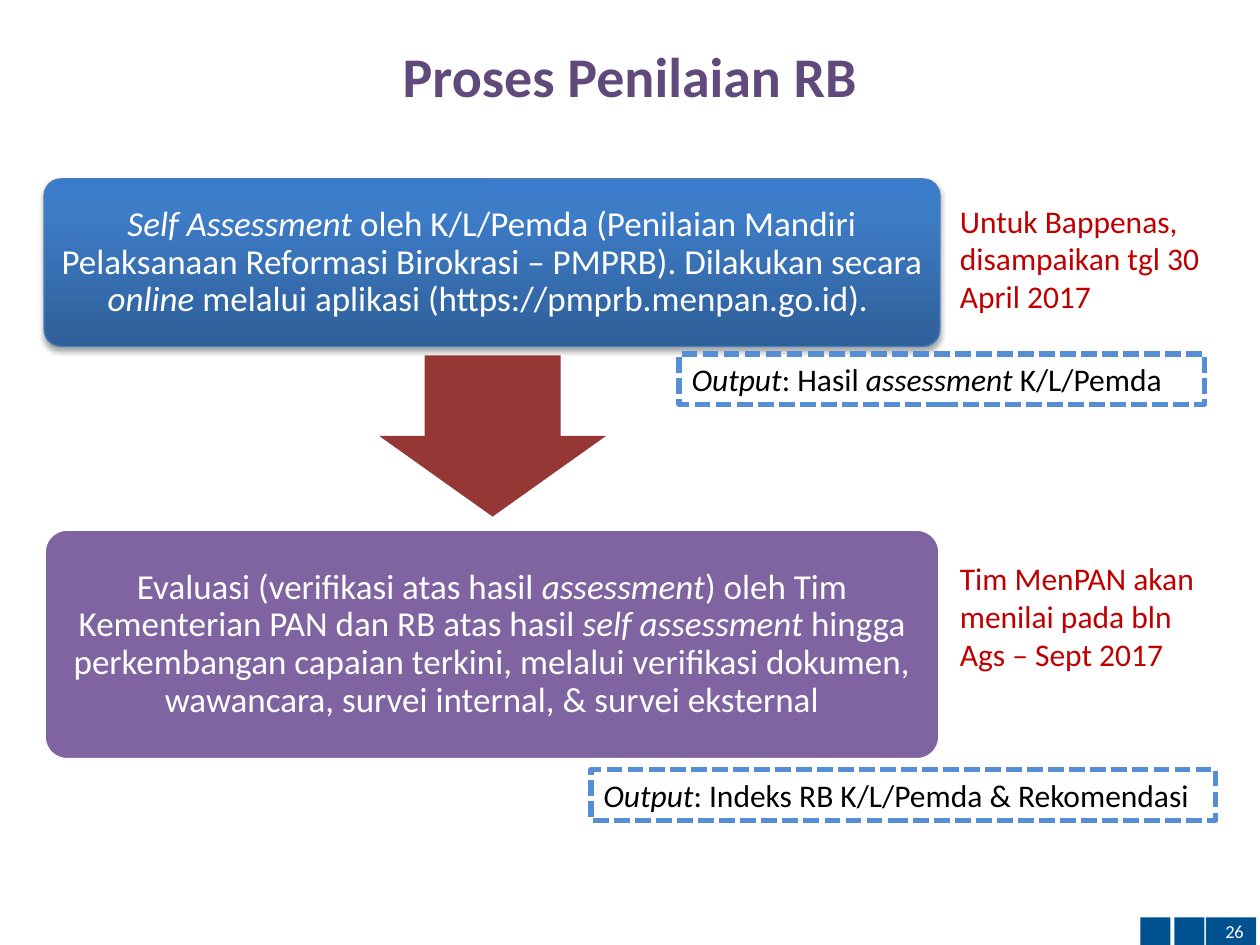
from copy import deepcopy

from lxml import etree
from pptx import Presentation
from pptx.dml.color import RGBColor
from pptx.enum.dml import MSO_LINE
from pptx.enum.shapes import MSO_SHAPE
from pptx.enum.text import MSO_ANCHOR, MSO_AUTO_SIZE, PP_ALIGN
from pptx.oxml.ns import qn
from pptx.util import Inches, Pt

RECT = MSO_SHAPE.RECTANGLE
ROUND_RECT = MSO_SHAPE.ROUNDED_RECTANGLE
DOWN_ARROW = MSO_SHAPE.DOWN_ARROW
DASH = MSO_LINE.SQUARE_DOT
LEFT, CENTER, RIGHT = PP_ALIGN.LEFT, PP_ALIGN.CENTER, PP_ALIGN.RIGHT
TOP, MIDDLE = MSO_ANCHOR.TOP, MSO_ANCHOR.MIDDLE
FIT_SHAPE = MSO_AUTO_SIZE.SHAPE_TO_FIT_TEXT

FONT = "Calibri"
BLACK = RGBColor(0x00, 0x00, 0x00)
WHITE = RGBColor(0xFF, 0xFF, 0xFF)
NAVY = RGBColor(0x00, 0x51, 0x8F)
TITLE_PURPLE = RGBColor(0x60, 0x4A, 0x7B)
PURPLE = RGBColor(0x80, 0x64, 0xA2)
DARK_RED = RGBColor(0x95, 0x37, 0x35)
RED = RGBColor(0xC0, 0x00, 0x00)
DASH_BLUE = RGBColor(0x55, 0x8E, 0xD5)
EDGE_BLUE = RGBColor(0x4B, 0x7E, 0xBC)
GRADIENT = [
    (0, RGBColor(0x2F, 0x5F, 0x99)),
    (0.8, RGBColor(0x3D, 0x7C, 0xC7)),
    (1, RGBColor(0x3A, 0x7C, 0xCB)),
]


def write(tf, runs, size, color, align=LEFT, anchor=TOP, bold=False):
    tf.word_wrap = True
    tf.vertical_anchor = anchor
    p = tf.paragraphs[0]
    p.alignment = align
    for text, italic in runs:
        r = p.add_run()
        r.text = text
        r.font.name = FONT
        r.font.size = Pt(size)
        r.font.color.rgb = color
        r.font.bold = bold
        r.font.italic = italic
    return p


def add_box(slide, kind, box, fill=None, line=None, width=1):
    s = slide.shapes.add_shape(kind, *map(Inches, box))
    s.shadow.inherit = False
    if fill is None:
        s.fill.background()
    else:
        s.fill.solid()
        s.fill.fore_color.rgb = fill
    if line is None:
        s.line.fill.background()
    else:
        s.line.color.rgb = line
        s.line.width = Pt(width)
    return s


def add_step(slide, top, height, runs, fill, line, width):
    s = add_box(slide, ROUND_RECT, (0.35, top, 7.11, height), fill, line, width)
    s.adjustments[0] = 0.1
    tf = s.text_frame
    tf.margin_left = tf.margin_right = Inches(0.03)
    tf.margin_top = tf.margin_bottom = Inches(0.03)
    p = write(tf, runs, 20, WHITE, CENTER, MIDDLE)
    p.line_spacing = 0.9
    return s


def add_gradient(s):
    s.fill.gradient()
    s.fill.gradient_angle = 90
    stops = s._element.spPr.find(qn("a:gradFill")).find(qn("a:gsLst"))
    stops.insert(1, deepcopy(stops[0]))
    for stop, (position, color) in zip(s.fill.gradient_stops, GRADIENT):
        stop.position = position
        stop.color.rgb = color


def add_shadow(s):
    effects = s._element.spPr.find(qn("a:effectLst"))
    shadow = etree.SubElement(
        effects, qn("a:outerShdw"), blurRad=str(Pt(3.1)), dist=str(Pt(1.8)),
        dir="5400000", rotWithShape="0")
    color = etree.SubElement(shadow, qn("a:srgbClr"), val="000000")
    etree.SubElement(color, qn("a:alpha"), val="35000")


def add_output(slide, box, runs):
    s = add_box(slide, RECT, box, line=DASH_BLUE, width=3)
    s.line.dash_style = DASH
    write(s.text_frame, runs, 18, BLACK)
    s.text_frame.auto_size = FIT_SHAPE


def add_label(slide, box, text, size, color, **style):
    tf = slide.shapes.add_textbox(*map(Inches, box)).text_frame
    write(tf, [(text, False)], size, color, **style)
    return tf


def add_note(slide, top, text):
    tf = add_label(slide, (7.52, top, 2.13, 1.01), text, 18, RED)
    tf.auto_size = FIT_SHAPE


def add_page_number(slide, number):
    for left, width in ((9.05, 0.24), (9.32, 0.24), (9.57, 0.4)):
        s = add_box(slide, RECT, (left, 7.28, width, 0.22), NAVY)
    write(s.text_frame, [(number, False)], 10.5, WHITE, RIGHT, MIDDLE)


def main():
    prs = Presentation()
    prs.slide_width, prs.slide_height = Inches(10), Inches(7.5)
    slide = prs.slides.add_slide(prs.slide_layouts[6])

    add_page_number(slide, "26")
    add_label(slide, (0.5, 0.13, 9, 0.93), "Proses Penilaian RB", 32,
              TITLE_PURPLE, align=CENTER, anchor=MIDDLE, bold=True)

    s = add_step(slide, 1.42, 1.33, [
        ("Self Assessment ", True),
        ("oleh K/L/Pemda (Penilaian Mandiri Pelaksanaan Reformasi "
         "Birokrasi – PMPRB). Dilakukan secara ", False),
        ("online ", True),
        ("melalui aplikasi (https://pmprb.menpan.go.id). ", False),
    ], NAVY, EDGE_BLUE, 0.75)
    add_gradient(s)
    add_shadow(s)

    s = add_box(slide, DOWN_ARROW, (3.01, 2.82, 1.8, 1.28), DARK_RED)
    s.adjustments[0] = 0.6
    s.adjustments[1] = 0.5

    add_step(slide, 4.2, 1.83, [
        ("Evaluasi (verifikasi atas hasil ", False),
        ("assessment", True),
        (") oleh Tim Kementerian PAN dan RB atas hasil ", False),
        ("self assessment ", True),
        ("hingga perkembangan capaian terkini, melalui verifikasi dokumen, "
         "wawancara, survei internal, & survei eksternal", False),
    ], PURPLE, WHITE, 2)

    add_output(slide, (5.39, 2.81, 4.17, 0.4), [
        ("Output", True), (": Hasil ", False),
        ("assessment ", True), ("K/L/Pemda", False),
    ])
    add_output(slide, (4.69, 6.11, 4.96, 0.4), [
        ("Output", True), (": Indeks RB K/L/Pemda & Rekomendasi", False),
    ])

    add_note(slide, 1.55, "Untuk Bappenas, disampaikan tgl 30 April 2017")
    add_note(slide, 4.39, "Tim MenPAN akan menilai pada bln Ags – Sept 2017")

    prs.save("out.pptx")


if __name__ == "__main__":
    main()
